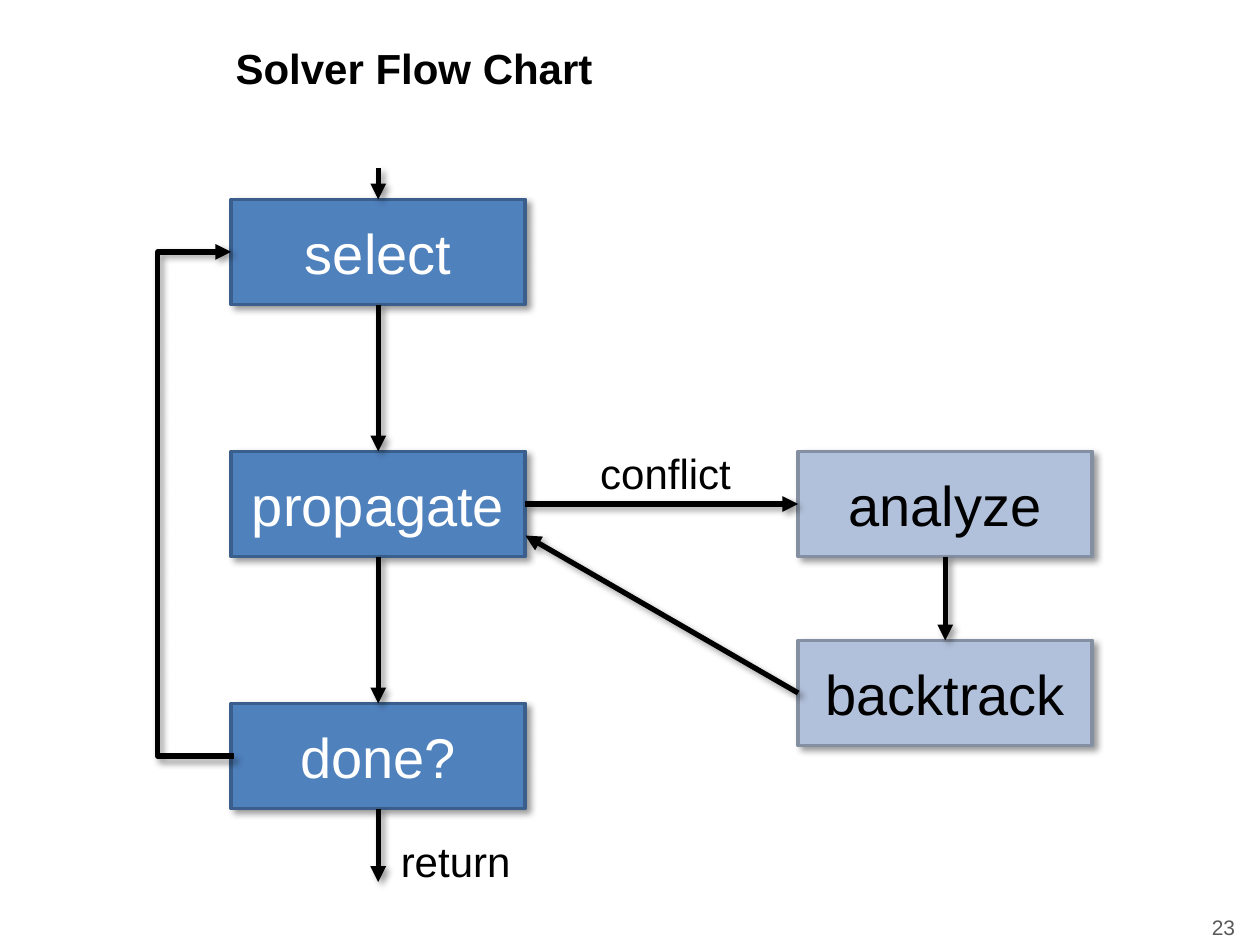
"""Build the solver flow chart slide."""
from dataclasses import dataclass

import pptx
import pptx.dml.color
import pptx.enum.shapes
import pptx.enum.text
import pptx.oxml
import pptx.oxml.ns
import pptx.util
from pptx.util import Cm


@dataclass(frozen=True)
class Theme:
    font: str = "Arial"
    ink: str = "000000"
    light: str = "FFFFFF"
    muted: str = "595959"
    main_fill: str = "4F81BD"
    main_line: str = "3A5F8C"
    side_fill: str = "B2C1DB"
    side_line: str = "848FA2"
    node_size: int = 32
    label_size: int = 24
    number_size: int = 12
    border: int = 2
    arrow: int = 3


THEME = Theme()
NODE_WIDTH, NODE_HEIGHT = 5.93, 2.12
MAIN_LEFT, SIDE_LEFT = 4.66, 16.09
MAIN_TOP, MAIN_STEP = 4.02, 5.08
BACKTRACK_TOP = 12.91
LOOP_LEFT, LOOP_OFFSET = 3.18, 0.05


def color(value):
    return pptx.dml.color.RGBColor.from_string(value)


def xml(tag, body):
    return pptx.oxml.parse_xml(f"<a:{tag} {pptx.oxml.ns.nsdecls('a')} {body}")


def set_shadow(shape):
    properties = shape.element.spPr
    for effects in properties.findall(pptx.oxml.ns.qn("a:effectLst")):
        properties.remove(effects)
    properties.append(xml("effectLst", (
        '><a:outerShdw blurRad="50800" dist="38100" dir="2700000" algn="tl" rotWithShape="0">'
        '<a:srgbClr val="000000"><a:alpha val="40000"/></a:srgbClr>'
        "</a:outerShdw></a:effectLst>")))


def write(shape, text, size, ink=THEME.ink, bold=False, align="LEFT", anchor="MIDDLE", wrap=True):
    frame = shape.text_frame
    frame.word_wrap = wrap
    if not wrap:
        frame.auto_size = pptx.enum.text.MSO_AUTO_SIZE.SHAPE_TO_FIT_TEXT
    frame.vertical_anchor = pptx.enum.text.MSO_ANCHOR[anchor]
    para = frame.paragraphs[0]
    para.alignment = pptx.enum.text.PP_ALIGN[align]
    span = para.add_run()
    span.text = text
    span.font.name = THEME.font
    span.font.size = pptx.util.Pt(size)
    span.font.bold = bold
    span.font.color.rgb = color(ink)


def add_label(page, text, left, top, width, height, size=THEME.label_size, **style):
    box = page.shapes.add_textbox(Cm(left), Cm(top), Cm(width), Cm(height))
    write(box, text, size, **style)


def add_node(page, text, left, top, fill, line, ink):
    box = page.shapes.add_shape(pptx.enum.shapes.MSO_SHAPE.RECTANGLE,
                                Cm(left), Cm(top), Cm(NODE_WIDTH), Cm(NODE_HEIGHT))
    box.fill.solid()
    box.fill.fore_color.rgb = color(fill)
    box.line.color.rgb = color(line)
    box.line.width = pptx.util.Pt(THEME.border)
    box.shadow.inherit = False
    set_shadow(box)
    write(box, text, THEME.node_size, ink=ink, align="CENTER")


def add_arrow(page, start, end, kind="STRAIGHT"):
    arrow = page.shapes.add_connector(pptx.enum.shapes.MSO_CONNECTOR[kind],
                                      *(Cm(value) for value in (*start, *end)))
    arrow.line.color.rgb = color(THEME.ink)
    arrow.line.width = pptx.util.Pt(THEME.arrow)
    arrow.line._get_or_add_ln().append(xml("tailEnd", 'type="triangle"/>'))
    set_shadow(arrow)
    return arrow


def add_loop(page, start, end):
    arrow = add_arrow(page, start, end, kind="ELBOW")
    bend = round((start[0] - LOOP_LEFT) / (start[0] - end[0]) * 100000)
    guides = arrow.element.spPr.find(pptx.oxml.ns.qn("a:prstGeom")).get_or_add_avLst()
    guides.append(xml("gd", f'name="adj1" fmla="val {bend}"/>'))


def main():
    deck = pptx.Presentation()
    deck.slide_width, deck.slide_height = Cm(25.4), Cm(19.05)
    page = deck.slides.add_slide(deck.slide_layouts[6])

    add_label(page, "Solver Flow Chart", 4.5, 0.33, 18.54, 2.06, bold=True)
    add_label(page, "23", 19.23, 18.34, 5.92, 0.71, size=THEME.number_size,
              ink=THEME.muted, align="RIGHT")

    select, propagate, done = (MAIN_TOP + MAIN_STEP * row for row in range(3))
    for text, top in (("select", select), ("propagate", propagate), ("done?", done)):
        add_node(page, text, MAIN_LEFT, top, THEME.main_fill, THEME.main_line, THEME.light)
    for text, top in (("analyze", propagate), ("backtrack", BACKTRACK_TOP)):
        add_node(page, text, SIDE_LEFT, top, THEME.side_fill, THEME.side_line, THEME.ink)

    add_label(page, "return", 7.83, 16.72, 2.75, 1.27, anchor="TOP", wrap=False)
    add_label(page, "conflict", 11.85, 8.89, 3.18, 1.27, anchor="TOP", wrap=False)

    half = NODE_HEIGHT / 2
    main_middle, side_middle = (left + NODE_WIDTH / 2 for left in (MAIN_LEFT, SIDE_LEFT))
    main_right = MAIN_LEFT + NODE_WIDTH
    for middle, start, end in (
        (main_middle, 3.39, select),
        (main_middle, select + NODE_HEIGHT, propagate),
        (main_middle, propagate + NODE_HEIGHT, done),
        (main_middle, done + NODE_HEIGHT, 17.78),
        (side_middle, propagate + NODE_HEIGHT, BACKTRACK_TOP),
    ):
        add_arrow(page, (middle, start), (middle, end))
    add_arrow(page, (main_right, propagate + half), (SIDE_LEFT, propagate + half))
    add_arrow(page, (SIDE_LEFT, BACKTRACK_TOP + half),
              (main_right, propagate + NODE_HEIGHT * 0.8))
    add_loop(page, (MAIN_LEFT + LOOP_OFFSET, done + half), (MAIN_LEFT, select + half))

    deck.save("out.pptx")


if __name__ == "__main__":
    main()
